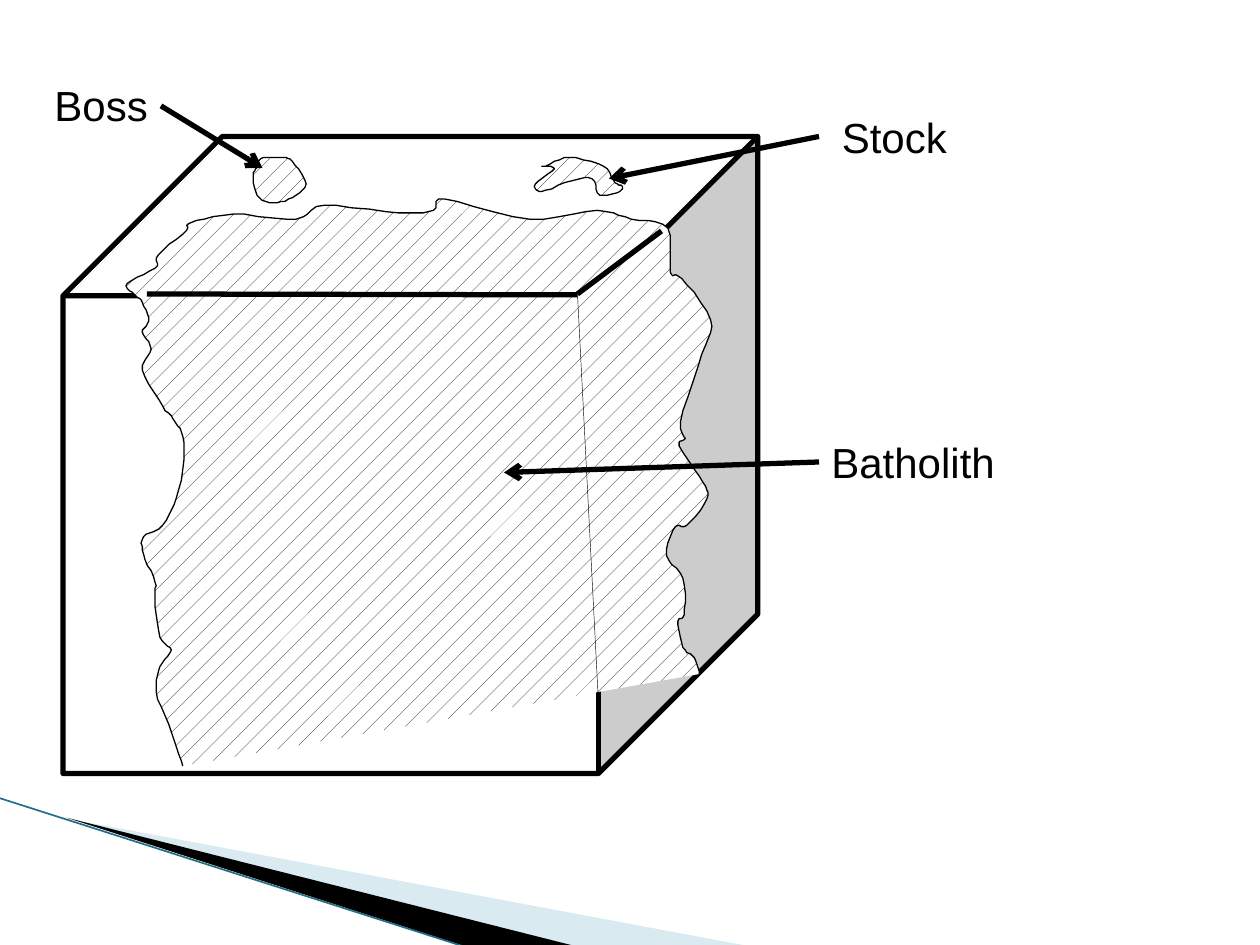
import pptx
import pptx.util
import pptx.dml.color
import pptx.enum.dml
import pptx.enum.shapes
import pptx.enum.text
import pptx.oxml
import pptx.oxml.ns

Pt = pptx.util.Pt

THEME = {
    "font": "Arial", "label_size": 24, "ink": "000000", "paper": "FFFFFF",
    "pale_band": "D9EAF1", "band_edge": "1F7085",
    "heavy": 3, "outline": 0.75, "edge": 0.95, "hairline": 0.25,
}
OUTLINE_UNIT = Pt(0.72)  # outline coordinates count steps of 0.72 pt
CURVE_STEPS = 5

BANDS = [  # fill, corner points
    ("pale_band", [(55, 650), (595, 751), (456, 751)]),
    ("ink", [(53, 649), (457, 751), (372, 752)]),
]
BAND_EDGE = ((-0.5, 456), (267, 541.5))
CUBE = (36, 78, 397, 364)

# Points that each rounded outline passes through.
BATHOLITH = [
    (145, 608), (136, 581), (124, 549), (127, 529), (136, 516), (127, 506),
    (123, 476), (123, 462), (114, 440), (114, 426), (129, 417), (142, 388),
    (146, 351), (139, 335), (129, 322), (113, 294), (120, 277), (113, 264),
    (118, 255), (113, 240), (107, 234), (101, 225), (123, 213), (126, 202),
    (148, 183), (151, 177), (185, 170), (235, 174), (257, 163), (316, 169),
    (344, 167), (353, 158), (420, 174), (474, 167), (501, 174), (530, 181),
    (532, 216), (541, 221), (564, 254), (557, 281), (540, 335), (544, 348),
    (539, 354), (558, 383), (561, 396), (545, 417), (536, 418), (529, 441),
    (542, 459), (543, 488), (538, 493), (542, 514), (551, 522), (555, 535),
]
BOSS = [
    (205, 132), (201, 139), (204, 155), (217, 161), (232, 157), (243, 146),
    (232, 128), (223, 125), (207, 126),
]
STOCK = [
    (435, 131), (452, 125), (479, 132), (488, 145), (494, 148), (492, 152),
    (476, 155), (470, 142), (452, 144), (430, 152), (425, 146), (440, 134),
    (430, 132),
]
INTRUSIONS = [(BATHOLITH, False), (BOSS, True), (STOCK, True)]  # outline, closed

BLOCK_EDGES = [  # start, end, weight
    ((84, 168), (330, 168.5), "heavy"),
    ((378, 132), (330, 168), "heavy"),
    ((330, 168), (342, 402), "hairline"),
]
LABELS = [  # text, box, arrow start, arrow end
    ("Batholith", (468, 246, 109, 36), (468, 264), (288, 270)),
    ("Stock", (474, 60, 75, 36), (468, 78), (348, 102)),
    ("Boss", (24, 42, 68, 36), (92, 60.5), (150, 96)),
]


def color(name):
    return pptx.dml.color.RGBColor.from_string(THEME[name])


def round_off(points, closed):
    """Return a denser list of points on a Catmull-Rom curve through points."""
    before, after = (points[-1], points[:2]) if closed else (points[0], points[-1:])
    chain = [before, *points, *after]
    trace = [points[0]]
    for a, b, c, d in zip(chain, chain[1:], chain[2:], chain[3:]):
        for step in range(1, CURVE_STEPS + 1):
            t = step / CURVE_STEPS
            trace.append(tuple(
                q + t / 2 * (r - p + t * (2 * p - 5 * q + 4 * r - s
                                          + t * (3 * (q - r) + s - p)))
                for p, q, r, s in zip(a, b, c, d)))
    return trace


def add_outline(shapes, points, closed):
    builder = shapes.build_freeform(*points[0], scale=OUTLINE_UNIT)
    builder.add_line_segments(points[1:], close=closed)
    shape = builder.convert_to_shape()
    shape.shadow.inherit = False
    return shape


def set_line(line, name, weight):
    line.color.rgb = color(name)
    line.width = Pt(THEME[weight])


def add_line(shapes, start, end, name, weight, arrow=False):
    connector = shapes.add_connector(
        pptx.enum.shapes.MSO_CONNECTOR.STRAIGHT, *map(Pt, start + end))
    set_line(connector.line, name, weight)
    namespace = pptx.oxml.ns.nsdecls("a")
    properties = connector._element.spPr
    if arrow:
        head = pptx.oxml.parse_xml(f'<a:tailEnd {namespace} type="arrow"/>')
        properties.find(pptx.oxml.ns.qn("a:ln")).append(head)
    properties.append(pptx.oxml.parse_xml(f"<a:effectLst {namespace}/>"))


def add_label(shapes, text, place):
    box = shapes.add_textbox(*map(Pt, place))
    frame = box.text_frame
    frame.word_wrap = False
    frame.auto_size = pptx.enum.text.MSO_AUTO_SIZE.SHAPE_TO_FIT_TEXT
    para = frame.paragraphs[0]
    para.text = text
    para.font.name = THEME["font"]
    para.font.size = Pt(THEME["label_size"])
    para.font.color.rgb = color("ink")


def main():
    deck = pptx.Presentation()
    deck.slide_width, deck.slide_height = Pt(720), Pt(540)
    shapes = deck.slides.add_slide(deck.slide_layouts[6]).shapes

    for fill, corners in BANDS:
        band = add_outline(shapes, corners, True)
        band.fill.solid()
        band.fill.fore_color.rgb = color(fill)
        band.line.fill.background()
    add_line(shapes, *BAND_EDGE, "band_edge", "edge")

    cube = shapes.add_shape(pptx.enum.shapes.MSO_SHAPE.CUBE, *map(Pt, CUBE))
    cube.shadow.inherit = False
    cube.fill.solid()
    cube.fill.fore_color.rgb = color("paper")
    set_line(cube.line, "ink", "heavy")

    for points, closed in INTRUSIONS:
        rock = add_outline(shapes, round_off(points, closed), closed)
        rock.fill.patterned()
        rock.fill.pattern = pptx.enum.dml.MSO_PATTERN.PERCENT_5
        rock.fill.fore_color.rgb = color("ink")
        rock.fill.back_color.rgb = color("paper")
        set_line(rock.line, "ink", "outline")
    for start, end, weight in BLOCK_EDGES:
        add_line(shapes, start, end, "ink", weight)
    for text, place, start, end in LABELS:
        add_label(shapes, text, place)
        add_line(shapes, start, end, "ink", "heavy", arrow=True)
    deck.save("out.pptx")


if __name__ == "__main__":
    main()
